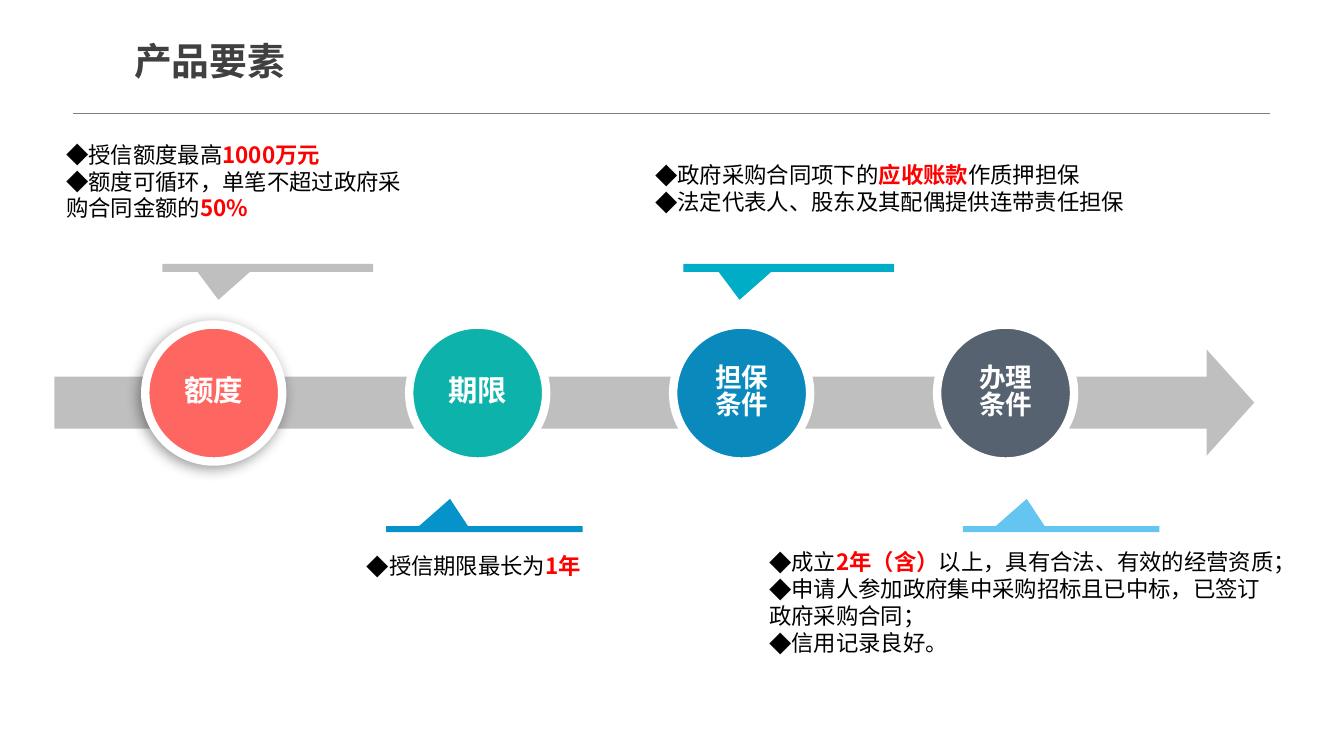
from lxml.etree import SubElement
from pptx import Presentation
from pptx.dml.color import RGBColor
from pptx.enum.shapes import MSO_CONNECTOR as Connector, MSO_SHAPE as Shape
from pptx.enum.text import MSO_ANCHOR as Anchor, PP_ALIGN as Align
from pptx.oxml.ns import qn
from pptx.util import Cm, Pt

FONT = "Noto Sans CJK SC"
COLORS = {
    "title": "404040", "rule": "808080", "text": "000000", "accent": "FF0000",
    "white": "FFFFFF", "gray": "BFBFBF", "coral": "FE6662", "teal": "0DB3AB",
    "blue": "0989BC", "slate": "576270", "azure": "0593C9", "cyan": "00ADC7",
    "sky": "64C6F0",
}
# Callout bars: size in cm and tip position relative to the bar
ABOVE = {"size": (5.31, 0.2), "tip": (-0.234, 4.033)}
BELOW = {"size": (4.95, 0.15), "tip": (-0.175, -5.095)}
FIRST_CIRCLE, CIRCLE_STEP, CIRCLE_TOP, CIRCLE_SIZE = 3.66, 6.65, 8.18, 3.45

# Each note is a list of paragraphs, each paragraph a list of (text, highlighted)
STEPS = [
    {"label": ["额度"], "size": 21, "color": "coral", "shadow": True,
     "callout": (ABOVE, 4.09, 6.65, "gray"), "box": (1.37, 3.4, 9.47, 2.77),
     "note": [[("授信额度最高", False), ("1000万元", True)],
              [("额度可循环，单笔不超过政府采购合同金额的", False), ("50%", True)]]},
    {"label": ["期限"], "size": 21, "color": "teal", "shadow": False,
     "callout": (BELOW, 9.73, 13.26, "azure"), "box": (8.94, 13.77, 7.29, 1.14),
     "note": [[("授信期限最长为", False), ("1年", True)]]},
    {"label": ["担保", "条件"], "size": 19, "color": "blue", "shadow": False,
     "callout": (ABOVE, 17.22, 6.65, "cyan"), "box": (16.21, 3.91, 14.94, 1.96),
     "note": [[("政府采购合同项下的", False), ("应收账款", True),
               ("作质押担保", False)],
              [("法定代表人、股东及其配偶提供连带责任担保", False)]]},
    {"label": ["办理", "条件"], "size": 19, "color": "slate", "shadow": False,
     "callout": (BELOW, 24.26, 13.26, "sky"), "box": (19.08, 13.67, 13.41, 3.58),
     "note": [[("成立", False), ("2年（含）", True),
               ("以上，具有合法、有效的经营资质；", False)],
              [("申请人参加政府集中采购招标且已中标，已签订政府采购合同；", False)],
              [("信用记录良好。", False)]]},
]


def color_of(name):
    return RGBColor.from_string(COLORS[name])


def add_run(paragraph, text, size, color, bold):
    run = paragraph.add_run()
    run.text = text
    formats = {"name": FONT, "size": Pt(size), "bold": bold}
    for attribute, value in formats.items():
        setattr(run.font, attribute, value)
    run.font.color.rgb = color_of(color)
    SubElement(run.font._element, qn("a:ea"), typeface=FONT)


def set_frame(frame, horizontal, vertical, anchor):
    formats = {
        "word_wrap": True, "vertical_anchor": anchor,
        "margin_left": Cm(horizontal), "margin_right": Cm(horizontal),
        "margin_top": Cm(vertical), "margin_bottom": Cm(vertical),
    }
    for attribute, value in formats.items():
        setattr(frame, attribute, value)


def add_filled(slide, kind, box, color):
    shape = slide.shapes.add_shape(kind, *map(Cm, box))
    shape.shadow.inherit = False
    shape.fill.solid()
    shape.fill.fore_color.rgb = color_of(color)
    shape.line.fill.background()
    return shape


def add_soft_shadow(shape):
    effects = shape._element.spPr.find(qn("a:effectLst"))
    shadow = SubElement(effects, qn("a:outerShdw"), blurRad=str(Pt(10)),
                        dist=str(Pt(3)), dir=str(135 * 60000), rotWithShape="0")
    shade = SubElement(shadow, qn("a:srgbClr"), val=COLORS["text"])
    SubElement(shade, qn("a:alpha"), val="40000")


def add_header(slide, left, top, width):
    # Title
    title = slide.shapes.title
    title.left, title.top = Cm(left + 1.2), Cm(top)
    title.width, title.height = Cm(20), Cm(1.5)
    set_frame(title.text_frame, 0.33, 0.18, Anchor.MIDDLE)
    paragraph = title.text_frame.paragraphs[0]
    paragraph.alignment = Align.LEFT
    add_run(paragraph, "产品要素", 27, "title", True)
    # Rule under the title
    rule_top = Cm(top + 2.09)
    rule = slide.shapes.add_connector(Connector.STRAIGHT, Cm(left), rule_top,
                                      Cm(left + width), rule_top)
    rule.line.color.rgb = color_of("rule")
    rule.line.width = Pt(0.25)
    SubElement(rule._element.spPr, qn("a:effectLst"))


def add_arrow(slide, box):
    arrow = add_filled(slide, Shape.RIGHT_ARROW, box, "gray")
    arrow.adjustments[0], arrow.adjustments[1] = 0.491, 0.448


def add_circle(slide, box, step):
    circle = add_filled(slide, Shape.OVAL, box, step["color"])
    circle.line.color.rgb = color_of("white")
    circle.line.width = Pt(6)
    if step["shadow"]:
        add_soft_shadow(circle)
    frame = circle.text_frame
    set_frame(frame, 0, 0, Anchor.MIDDLE)
    for index, text in enumerate(step["label"]):
        paragraph = frame.add_paragraph() if index else frame.paragraphs[0]
        paragraph.alignment = Align.CENTER
        paragraph.line_spacing = 0.83
        add_run(paragraph, text, step["size"], "white", True)


def add_callout(slide, style, left, top, color):
    box = (left, top, *style["size"])
    callout = add_filled(slide, Shape.RECTANGULAR_CALLOUT, box, color)
    callout.adjustments[0], callout.adjustments[1] = style["tip"]


def add_note(slide, box, note):
    frame = slide.shapes.add_textbox(*map(Cm, box)).text_frame
    set_frame(frame, 0.3, 0.15, Anchor.TOP)
    for index, parts in enumerate(note):
        paragraph = frame.add_paragraph() if index else frame.paragraphs[0]
        paragraph.line_spacing = 1.0
        properties = paragraph._p.get_or_add_pPr()
        SubElement(properties, qn("a:buFont"), typeface=FONT)
        SubElement(properties, qn("a:buChar"), char="◆")
        for text, highlighted in parts:
            color = "accent" if highlighted else "text"
            add_run(paragraph, text, 16, color, highlighted)


def main():
    presentation = Presentation()
    presentation.slide_width, presentation.slide_height = Cm(33.86), Cm(19.05)
    slide = presentation.slides.add_slide(presentation.slide_layouts[5])
    add_header(slide, 1.85, 0.76, 30.15)
    add_arrow(slide, (1.37, 8.81, 30.23, 2.67))
    # Four steps along the arrow
    for index, step in enumerate(STEPS):
        left = FIRST_CIRCLE + index * CIRCLE_STEP
        add_circle(slide, (left, CIRCLE_TOP, CIRCLE_SIZE, CIRCLE_SIZE), step)
        add_callout(slide, *step["callout"])
        add_note(slide, step["box"], step["note"])
    presentation.save("out.pptx")


if __name__ == "__main__":
    main()
